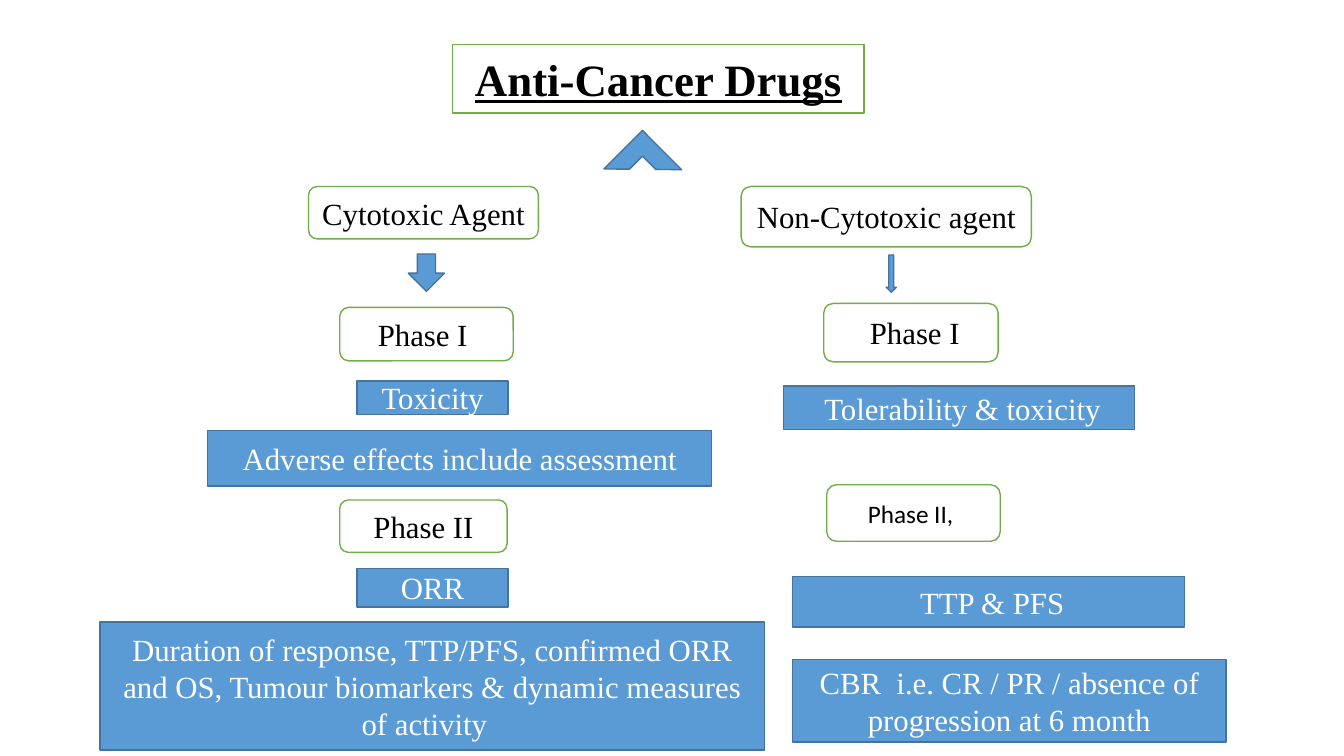
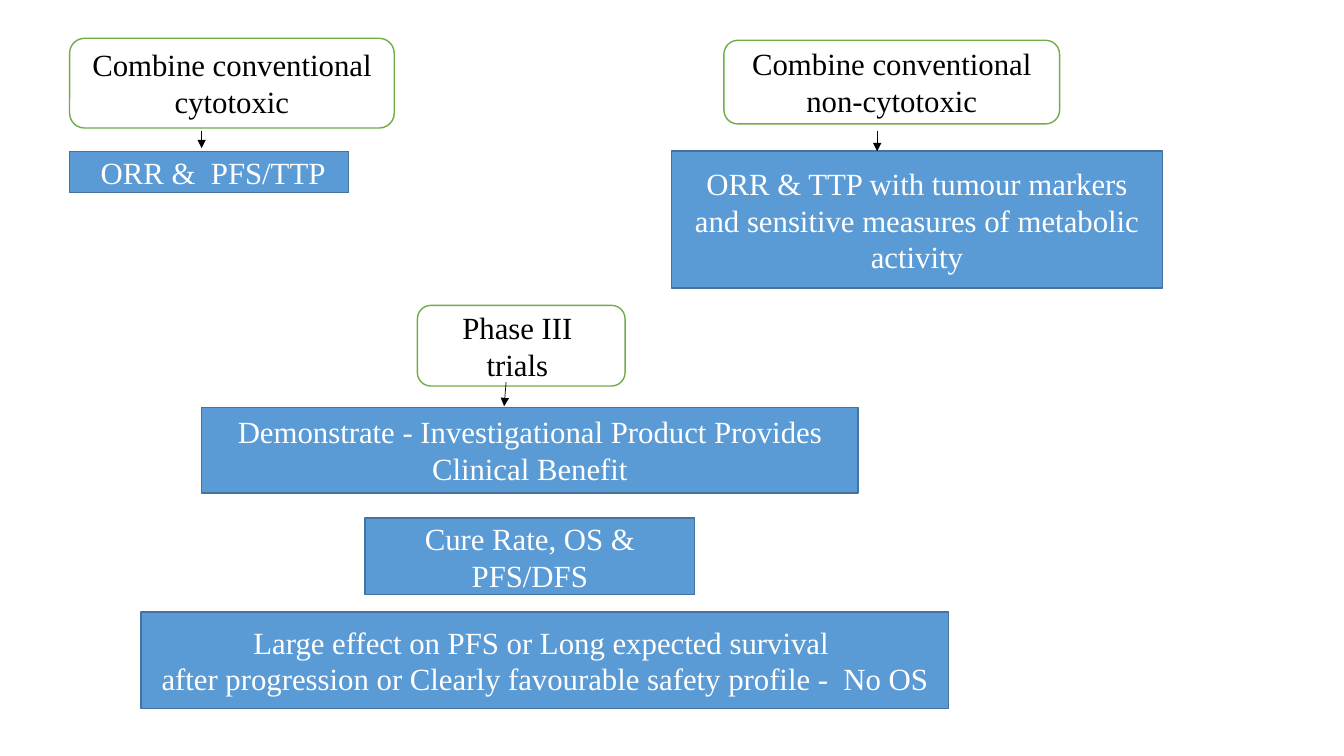
from lxml.etree import SubElement
from pptx import Presentation
from pptx.dml.color import RGBColor
from pptx.enum.shapes import MSO_CONNECTOR, MSO_SHAPE
from pptx.enum.text import MSO_ANCHOR, PP_ALIGN
from pptx.oxml.ns import qn
from pptx.util import Pt

SCALE = 9144


def px(count):
    return count * SCALE


def color(code):
    return RGBColor.from_string(code)


class Deck:
    white, black = "FFFFFF", "000000"
    blue, navy, green = "5B9BD5", "43739E", "70AD47"
    serif, sans = "Times New Roman", "Calibri"
    size = 22

    def __init__(self):
        self.file = Presentation()
        self.file.slide_width = px(1333)
        self.file.slide_height = px(750)

    def page(self):
        self.slide = self.file.slides.add_slide(self.file.slide_layouts[6])

    def shape(self, kind, area, fill, edge):
        item = self.slide.shapes.add_shape(kind, *map(px, area))
        item.shadow.inherit = False
        item.fill.solid()
        item.fill.fore_color.rgb = color(fill)
        item.line.color.rgb = color(edge)
        item.line.width = Pt(1)
        return item

    def label(self, item, text, ink, font=serif, size=size, strong=False):
        frame = item.text_frame
        frame.text = text
        frame.word_wrap = True
        frame.vertical_anchor = MSO_ANCHOR.MIDDLE
        for para in frame.paragraphs:
            para.alignment = PP_ALIGN.CENTER
            for run in para.runs:
                run.font.name = font
                run.font.size = Pt(size)
                run.font.color.rgb = color(ink)
                run.font.bold = strong
                run.font.underline = strong

    def title(self, text, area):
        item = self.shape(MSO_SHAPE.RECTANGLE, area, self.white, self.green)
        self.label(item, text, self.black, size=32, strong=True)

    def node(self, text, area, kind=MSO_SHAPE.FLOWCHART_ALTERNATE_PROCESS, **style):
        item = self.shape(kind, area, self.white, self.green)
        self.label(item, text, self.black, **style)

    def bar(self, text, area, kind=MSO_SHAPE.RECTANGLE):
        item = self.shape(kind, area, self.blue, self.navy)
        self.label(item, text, self.white)

    def mark(self, kind, area, turn=0):
        self.shape(kind, area, self.blue, self.navy).rotation = turn

    def arrow(self, *ends):
        item = self.slide.shapes.add_connector(MSO_CONNECTOR.STRAIGHT, *map(px, ends))
        item.line.color.rgb = color(self.black)
        item.line.width = Pt(0.5)
        props = item.element.spPr
        SubElement(props.find(qn("a:ln")), qn("a:tailEnd"), type="triangle")
        SubElement(props, qn("a:effectLst"))


def drugs(deck):
    deck.page()
    deck.title("Anti-Cancer Drugs", (449, 44, 408, 68))
    deck.mark(MSO_SHAPE.HALF_FRAME, (610, 141, 55, 54), 45)
    for area in ((405, 252, 36, 37), (879, 253, 10, 37)):
        deck.mark(MSO_SHAPE.DOWN_ARROW, area)
    for text, area in (
        ("Cytotoxic Agent", (306, 185, 228, 52)),
        ("Non-Cytotoxic agent", (735, 185, 288, 60)),
        ("Phase I ", (337, 305, 172, 53)),
        ("Phase II", (337, 496, 166, 52)),
    ):
        deck.node(text, area, MSO_SHAPE.ROUNDED_RECTANGLE)
    deck.node(" Phase I", (817, 301, 173, 58))
    deck.node("Phase II, ", (820, 481, 172, 56), font=deck.sans, size=18)
    for text, area in (
        ("Toxicity", (354, 378, 150, 33)),
        ("Adverse effects include assessment", (206, 427, 500, 55)),
        ("ORR", (354, 564, 150, 38)),
        ("Duration of response, TTP/PFS, confirmed ORR and OS, Tumour "
         "biomarkers & dynamic measures of activity  ", (99, 617, 659, 127)),
        (" Tolerability & toxicity", (777, 383, 348, 43)),
        (" TTP & PFS", (786, 572, 389, 50)),
        ("CBR  i.e. CR / PR / absence of progression at 6 month",
         (786, 654, 430, 82)),
    ):
        deck.bar(text, area, MSO_SHAPE.FLOWCHART_PROCESS)


def trials(deck):
    deck.page()
    for text, area in (
        ("Combine conventional cytotoxic", (69, 38, 322, 89)),
        ("Combine conventional non-cytotoxic", (718, 40, 333, 83)),
        ("Phase III  trials ", (414, 303, 206, 80)),
    ):
        deck.node(text, area)
    for text, area in (
        (" ORR &  PFS/TTP", (69, 150, 277, 41)),
        ("ORR & TTP with tumour markers and sensitive measures of metabolic "
         "activity", (666, 150, 487, 136)),
        ("Demonstrate - Investigational Product Provides Clinical Benefit",
         (200, 404, 651, 85)),
        ("Cure Rate, OS & PFS/DFS", (362, 514, 327, 76)),
        ("Large effect on PFS or Long expected survival \n"
         "after progression or Clearly favourable safety profile -  No OS",
         (140, 607, 801, 96)),
    ):
        deck.bar(text, area)
    for ends in ((870, 130, 870, 150), (200, 130, 200, 147), (502, 379, 500, 403)):
        deck.arrow(*ends)


def main():
    deck = Deck()
    drugs(deck)
    trials(deck)
    deck.file.save("out.pptx")


if __name__ == "__main__":
    main()
